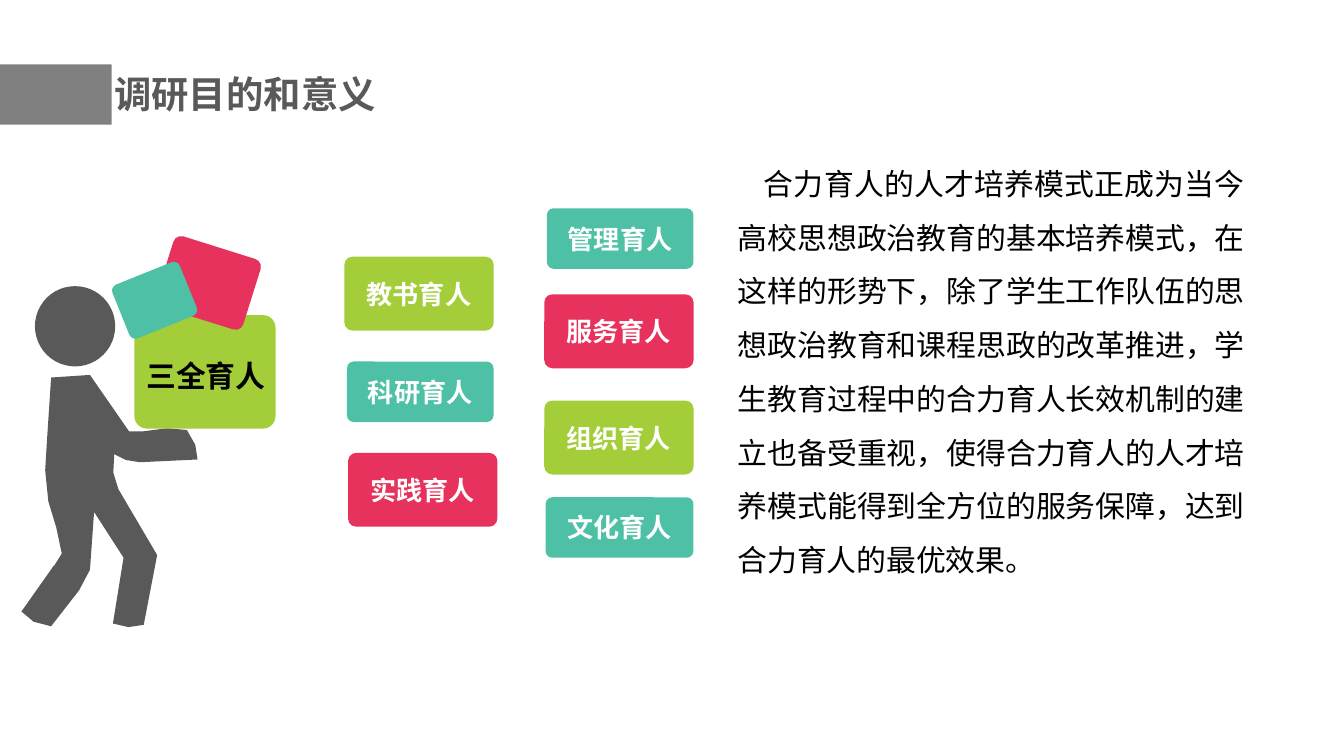
from pptx import Presentation
from pptx.dml.color import RGBColor
from pptx.enum.shapes import MSO_SHAPE
from pptx.enum.text import MSO_ANCHOR, MSO_AUTO_SIZE, PP_ALIGN
from pptx.oxml.ns import qn
from pptx.util import Pt
from lxml import etree

COLORS = {
    "dark": "595959", "gray": "808080", "black": "000000", "white": "FFFFFF",
    "green": "A3CD39", "red": "E6325C", "teal": "4EC0A5",
}
FONT = "Noto Sans CJK SC"


def write(sp, text, size=14, color="white", bold=True, align=PP_ALIGN.CENTER,
          anchor=MSO_ANCHOR.MIDDLE, wrap=True, font=FONT, spacing=1.0, indent=0):
    tf = sp.text_frame
    tf.word_wrap = wrap
    tf.auto_size = MSO_AUTO_SIZE.NONE
    tf.vertical_anchor = anchor
    p = tf.paragraphs[0]
    p.alignment = align
    p.line_spacing = spacing
    p.space_before = Pt(0)
    pPr = p._p.get_or_add_pPr()
    pPr.set("marL", "0")
    pPr.set("indent", str(Pt(indent)))
    etree.SubElement(pPr, qn("a:buNone"))
    r = p.add_run()
    r.text = text
    r.font.name = font
    r.font.size = Pt(size)
    r.font.bold = bold
    r.font.color.rgb = RGBColor.from_string(COLORS[color])
    etree.SubElement(r._r.get_or_add_rPr(), qn("a:ea"), typeface=FONT)


def paint(sp, color):
    sp.fill.solid()
    sp.fill.fore_color.rgb = RGBColor.from_string(COLORS[color])
    sp.line.fill.background()
    sp.shadow.inherit = False


prs = Presentation()
prs.slide_width, prs.slide_height = Pt(720), Pt(405)
s = prs.slides.add_slide(prs.slide_layouts[1])

title = s.shapes.title
title.left, title.top, title.width, title.height = Pt(54), Pt(34), Pt(204), Pt(32)
write(title, "调研目的和意义", size=20, color="dark", align=PP_ALIGN.LEFT)

body = s.placeholders[1]
body.left, body.top, body.width, body.height = Pt(388), Pt(75.6), Pt(286.4), Pt(268)
write(body, "合力育人的人才培养模式正成为当今高校思想政治教育的基本培养模式，"
      "在这样的形势下，除了学生工作队伍的思想政治教育和课程思政的改革推进，"
      "学生教育过程中的合力育人长效机制的建立也备受重视，"
      "使得合力育人的人才培养模式能得到全方位的服务保障，达到合力育人的最优效果。",
      size=16, color="black", bold=False, align=PP_ALIGN.JUSTIFY,
      anchor=MSO_ANCHOR.TOP, font="Arial", spacing=1.5, indent=14)

bar = s.shapes.add_shape(MSO_SHAPE.RECTANGLE, 0, Pt(34.5), Pt(59.8), Pt(32.3))
paint(bar, "gray")

head = s.shapes.add_shape(MSO_SHAPE.OVAL, Pt(18.7), Pt(153.3), Pt(43), Pt(43))
paint(head, "dark")

torso = [
    (48.2, 200.9), (27.4, 202.3), (25.2, 235.4), (24.2, 252), (25.9, 268.6),
    (30.1, 282.5), (33.1, 296.6), (28.1, 304.6), (34.7, 311.4), (42.5, 316.1),
    (48.2, 305.3), (50.4, 274.3), (66.2, 298.8), (60.5, 334.1), (68.8, 336),
    (77, 334.8), (84.2, 297.4), (63.4, 262.1), (60.7, 253.2), (61.2, 243.4),
    (67.5, 246.5), (74.9, 247.7), (105.8, 246.2), (104.6, 238.3), (100.1, 230.4),
    (89.3, 229.5), (77, 231.1), (69.1, 231.1),
]
shin = [(42.5, 316.1), (37, 309), (28.8, 303.1), (11.5, 327.6), (18.1, 333.1), (27.4, 335.5)]
for outline in (torso, shin):
    points = [(Pt(x), Pt(y)) for x, y in outline]
    builder = s.shapes.build_freeform(*points[0], scale=1.0)
    builder.add_line_segments(points[1:], close=True)
    paint(builder.convert_to_shape(), "dark")

boxes = [
    ("", "green", 72, 168.8, 75.6, 60.8, 0),
    ("", "red", 87.1, 131.8, 49, 39.6, 17.4),
    ("", "teal", 63.4, 145.4, 38.9, 31, 338),
    ("教书育人", "green", 184.5, 137.5, 80, 39.6, 0),
    ("科研育人", "teal", 185.9, 193.7, 78.5, 32.4, 0),
    ("实践育人", "red", 186.5, 242.6, 80, 39.6, 0),
    ("管理育人", "teal", 293, 111.6, 78.5, 32.4, 0),
    ("服务育人", "red", 291.6, 157.7, 80, 39.6, 0),
    ("组织育人", "green", 291.6, 214.6, 80, 39.6, 0),
    ("文化育人", "teal", 292.3, 266.4, 79.2, 32.4, 0),
]
for text, color, x, y, w, h, angle in boxes:
    sp = s.shapes.add_shape(MSO_SHAPE.ROUNDED_RECTANGLE, Pt(x), Pt(y), Pt(w), Pt(h))
    sp.adjustments[0] = 0.11
    sp.rotation = angle
    paint(sp, color)
    if text:
        write(sp, text)

label = s.shapes.add_textbox(Pt(71.3), Pt(188), Pt(79.2), Pt(26.6))
write(label, "三全育人", size=16, color="black", align=PP_ALIGN.LEFT,
      anchor=MSO_ANCHOR.TOP, wrap=False)

prs.save("out.pptx")
